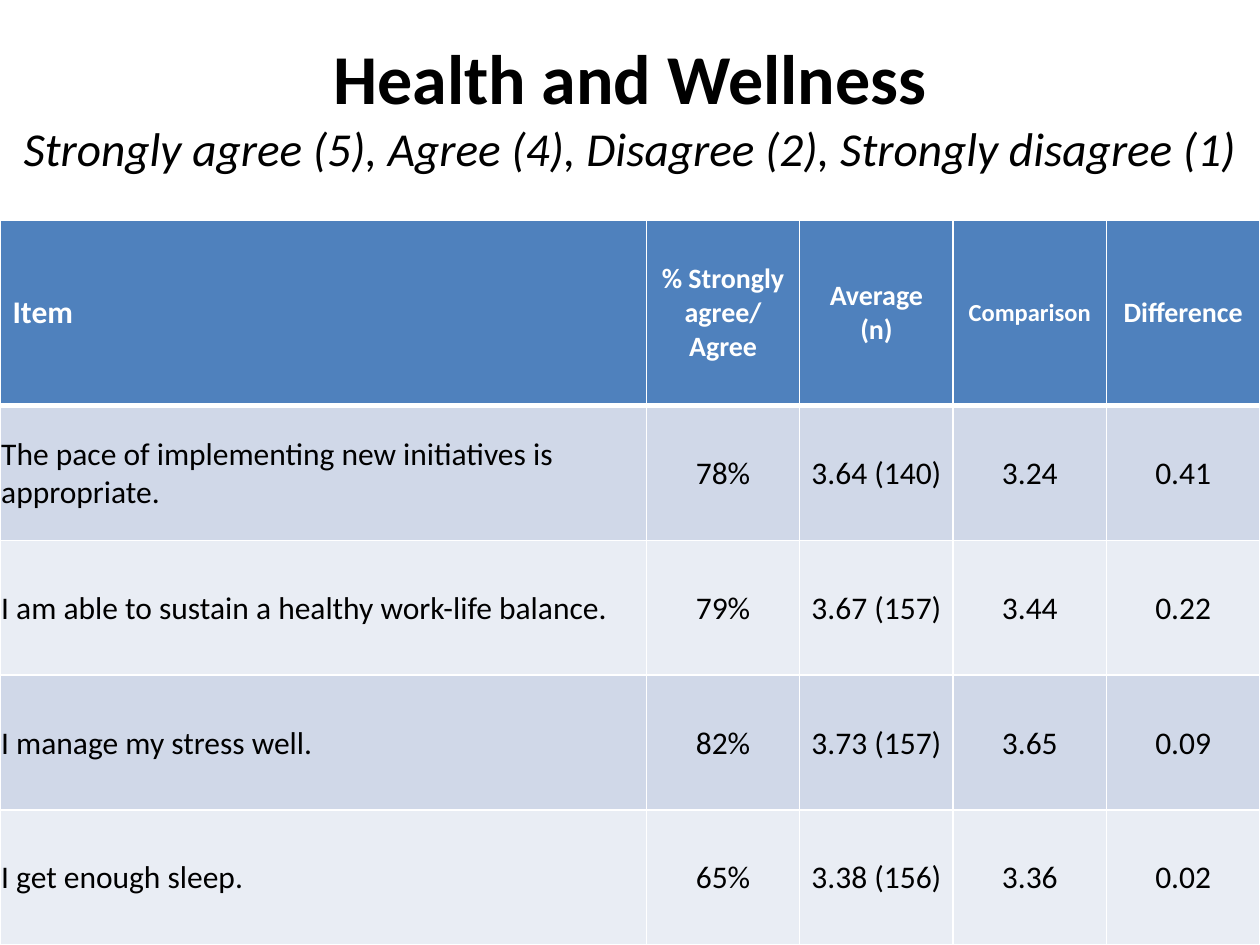
from lxml.etree import SubElement
from pptx import Presentation
from pptx.dml.color import RGBColor
from pptx.enum.text import MSO_ANCHOR as Anchor, PP_ALIGN as Align
from pptx.oxml.ns import qn
from pptx.util import Inches, Pt

WHITE = RGBColor(0xFF, 0xFF, 0xFF)
BLACK = RGBColor(0x00, 0x00, 0x00)
HEADER_BLUE = RGBColor(0x4F, 0x81, 0xBD)
BANDS = (RGBColor(0xD0, 0xD8, 0xE8), RGBColor(0xE9, 0xED, 0xF4))

HEADERS = ("Item", "% Strongly agree/ Agree", "Average (n)", "Comparison", "Difference")
HEADER_SIZES = (18, 16, 16, 14, 16)
RESULTS = (
    ("The pace of implementing new initiatives is appropriate.", "78%", "3.64 (140)", "3.24", "0.41"),
    ("I am able to sustain a healthy work-life balance.", "79%", "3.67 (157)", "3.44", "0.22"),
    ("I manage my stress well.", "82%", "3.73 (157)", "3.65", "0.09"),
    ("I get enough sleep.", "65%", "3.38 (156)", "3.36", "0.02"),
)
CELL_MARGINS = {
    "margin_left": Inches(0.01),
    "margin_right": Inches(0.01),
    "margin_top": Inches(0.01),
    "margin_bottom": 0,
}


def apply(target, values):
    for name, value in values.items():
        setattr(target, name, value)


class SurveySlide:
    font_name = "Calibri"

    def __init__(self, presentation):
        self.width = presentation.slide_width
        self.height = presentation.slide_height
        self.slide = presentation.slides.add_slide(presentation.slide_layouts[6])

    def box(self, left, top, width, height):
        return (int(left * self.width), int(top * self.height),
                int(width * self.width), int(height * self.height))

    def text_run(self, paragraph, text, size, color=BLACK, bold=False, italic=False):
        run = paragraph.add_run()
        run.text = text
        apply(run.font, {"name": self.font_name, "size": Pt(size), "bold": bold, "italic": italic})
        run.font.color.rgb = color

    def title(self, area, heading, scale):
        frame = self.slide.shapes.add_textbox(*self.box(*area)).text_frame
        apply(frame, {"word_wrap": True, "vertical_anchor": Anchor.MIDDLE})
        paragraph = frame.paragraphs[0]
        paragraph.alignment = Align.CENTER
        self.text_run(paragraph, heading, 40, bold=True)
        paragraph.add_line_break()
        self.text_run(paragraph, scale, 27, italic=True)

    def borders(self, cell, widths):
        properties = cell._tc.get_or_add_tcPr()
        for side, width in widths.items():
            line = SubElement(properties, qn(f"a:ln{side}"), w=str(int(Pt(width))))
            fill = SubElement(line, qn("a:solidFill"))
            SubElement(fill, qn("a:srgbClr"), val=str(WHITE))

    def cell(self, cell, text, column, fill, widths, **style):
        self.borders(cell, widths)
        cell.fill.solid()
        cell.fill.fore_color.rgb = fill
        cell.vertical_anchor = Anchor.MIDDLE
        paragraph = cell.text_frame.paragraphs[0]
        paragraph.alignment = Align.CENTER if column else Align.LEFT
        self.text_run(paragraph, text, **style)

    def table(self, area, item_share, header_share):
        left, top, width, height = self.box(*area)
        row_count, column_count = len(RESULTS) + 1, len(HEADERS)
        table = self.slide.shapes.add_table(row_count, column_count, left, top, width, height).table
        for lines, total, share, attribute in (
            (table.columns, width, item_share, "width"),
            (table.rows, height, header_share, "height"),
        ):
            for index, line in enumerate(lines):
                part = (1 - share) / (len(lines) - 1) if index else share
                setattr(line, attribute, int(total * part))
        for column, (text, size) in enumerate(zip(HEADERS, HEADER_SIZES)):
            self.cell(table.cell(0, column), text, column, HEADER_BLUE,
                      {"L": 1, "R": 1, "T": 1, "B": 3}, size=size, color=WHITE, bold=True)
        for row, result in enumerate(RESULTS, 1):
            widths = {"L": 1, "R": 1, "T": 3 if row == 1 else 1, "B": 1}
            for column, text in enumerate(result):
                cell = table.cell(row, column)
                apply(cell, CELL_MARGINS)
                self.cell(cell, text, column, BANDS[(row - 1) % 2], widths, size=18)


def main():
    presentation = Presentation()
    apply(presentation, {"slide_width": Inches(10), "slide_height": Inches(7.5)})
    survey = SurveySlide(presentation)
    title_share = 1.67 / 7.5
    table_top = 1.75 / 7.5
    survey.title((0, 0, 1, title_share), "Health and Wellness",
                 "Strongly agree (5), Agree (4), Disagree (2), Strongly disagree (1)")
    survey.table((0, table_top, 1, 1 - table_top), item_share=5.13 / 10, header_share=1.47 / 5.75)
    presentation.save("out.pptx")


if __name__ == "__main__":
    main()
